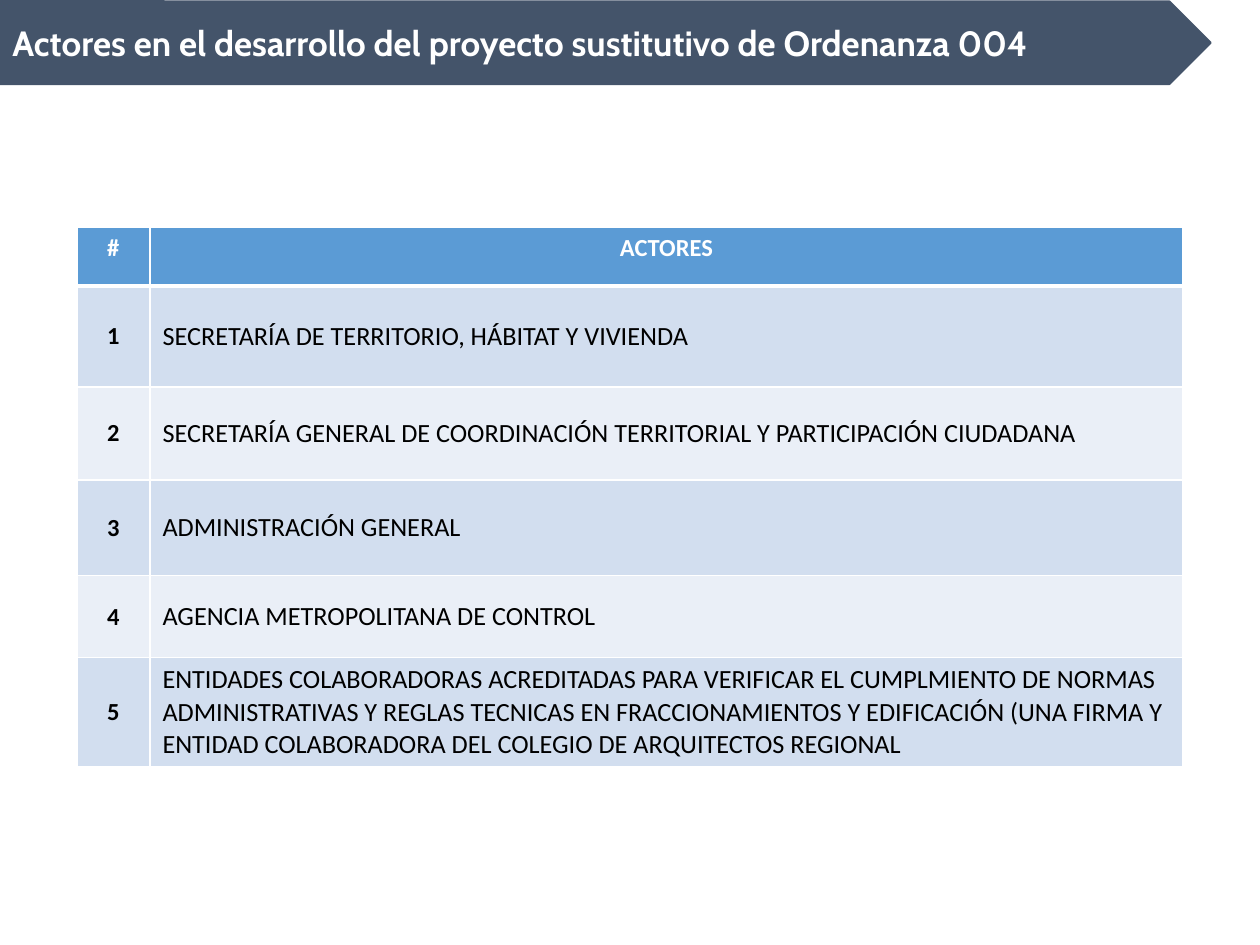
from dataclasses import dataclass

from lxml.etree import SubElement
from pptx import Presentation
from pptx.dml.color import RGBColor as Color
from pptx.enum.shapes import MSO_SHAPE as Preset
from pptx.enum.text import MSO_ANCHOR as Anchor, PP_ALIGN as Align
from pptx.oxml.ns import qn
from pptx.util import Inches, Pt

TITLE = "Actores en el desarrollo del proyecto sustitutivo de Ordenanza 004"
HEADER = ("#", "ACTORES")
ACTORS = [
    "SECRETARÍA DE TERRITORIO, HÁBITAT Y VIVIENDA",
    "SECRETARÍA GENERAL DE COORDINACIÓN TERRITORIAL Y PARTICIPACIÓN CIUDADANA",
    "ADMINISTRACIÓN GENERAL",
    "AGENCIA METROPOLITANA DE CONTROL",
    "ENTIDADES COLABORADORAS ACREDITADAS PARA VERIFICAR EL CUMPLMIENTO DE NORMAS "
    "ADMINISTRATIVAS Y REGLAS TECNICAS EN FRACCIONAMIENTOS Y EDIFICACIÓN "
    "(UNA FIRMA Y ENTIDAD COLABORADORA DEL COLEGIO DE ARQUITECTOS REGIONAL",
]
COLUMN_WIDTHS = (0.58, 8.2)
ROW_HEIGHTS = (0.47, 0.8, 0.74, 0.76, 0.65, 0.85)


@dataclass(frozen=True)
class Theme:
    banner: str = "44546A"
    header: str = "5B9BD5"
    bands: tuple = ("D2DEEF", "EAEFF7")
    light: str = "FFFFFF"
    dark: str = "000000"
    title_font: str = "Cabin"
    table_font: str = "Calibri"
    title_size: int = 20
    label_size: int = 14
    actor_size: int = 15


THEME = Theme()


def style_text(frame, font_name, size, color, bold, align):
    para = frame.paragraphs[0]
    para.alignment = align
    for span in para.runs:
        font = span.font
        font.name, font.size, font.bold = font_name, Pt(size), bold
        font.color.rgb = Color.from_string(color)


def add_banner_part(page, preset, width):
    shape = page.shapes.add_shape(preset, 0, Inches(0.01), Inches(width), Inches(0.66))
    shape.shadow.inherit = False
    shape.fill.solid()
    shape.fill.fore_color.rgb = Color.from_string(THEME.banner)
    shape.line.color.rgb = Color.from_string(THEME.banner)
    shape.line.width = Pt(1)
    return shape


def set_borders(cell, bottom, top):
    properties = cell._tc.get_or_add_tcPr()
    widths = {"lnL": 1, "lnR": 1, "lnT": top, "lnB": bottom}
    for place, (side, width) in enumerate(widths.items()):
        line = SubElement(properties, qn(f"a:{side}"), w=str(Pt(width)))
        fill = SubElement(line, qn("a:solidFill"))
        SubElement(fill, qn("a:srgbClr"), val=THEME.light)
        properties.insert(place, line)


def add_banner(page):
    add_banner_part(page, Preset.RECTANGLE, 1.3)
    banner = add_banner_part(page, Preset.PENTAGON, 9.61)
    frame = banner.text_frame
    frame.text = TITLE
    frame.word_wrap = True
    frame.vertical_anchor = Anchor.MIDDLE
    style_text(frame, THEME.title_font, THEME.title_size, THEME.light, True, Align.LEFT)


def add_actor_table(page):
    rows = [HEADER] + [(str(number), actor) for number, actor in enumerate(ACTORS, 1)]
    table = page.shapes.add_table(
        len(rows), len(HEADER), Inches(0.61), Inches(1.8),
        Inches(sum(COLUMN_WIDTHS)), Inches(sum(ROW_HEIGHTS)),
    ).table
    for column, width in zip(table.columns, COLUMN_WIDTHS):
        column.width = Inches(width)
    for row, height in zip(table.rows, ROW_HEIGHTS):
        row.height = Inches(height)

    for row_index, texts in enumerate(rows):
        is_header = row_index == 0
        fill = THEME.header if is_header else THEME.bands[(row_index - 1) % 2]
        for column_index, text in enumerate(texts):
            cell = table.cell(row_index, column_index)
            is_label = is_header or column_index == 0
            cell.fill.solid()
            cell.fill.fore_color.rgb = Color.from_string(fill)
            cell.vertical_anchor = Anchor.TOP if is_header else Anchor.MIDDLE
            set_borders(cell, 3 if is_header else 1, 3 if row_index == 1 else 1)
            cell.text_frame.text = text
            style_text(
                cell.text_frame, THEME.table_font,
                THEME.label_size if is_label else THEME.actor_size,
                THEME.light if is_header else THEME.dark,
                is_label, Align.CENTER if is_label else Align.LEFT,
            )


def main():
    deck = Presentation()
    deck.slide_width, deck.slide_height = Inches(10), Inches(7.5)
    page = deck.slides.add_slide(deck.slide_layouts[6])
    add_banner(page)
    add_actor_table(page)
    deck.save("out.pptx")


if __name__ == "__main__":
    main()
